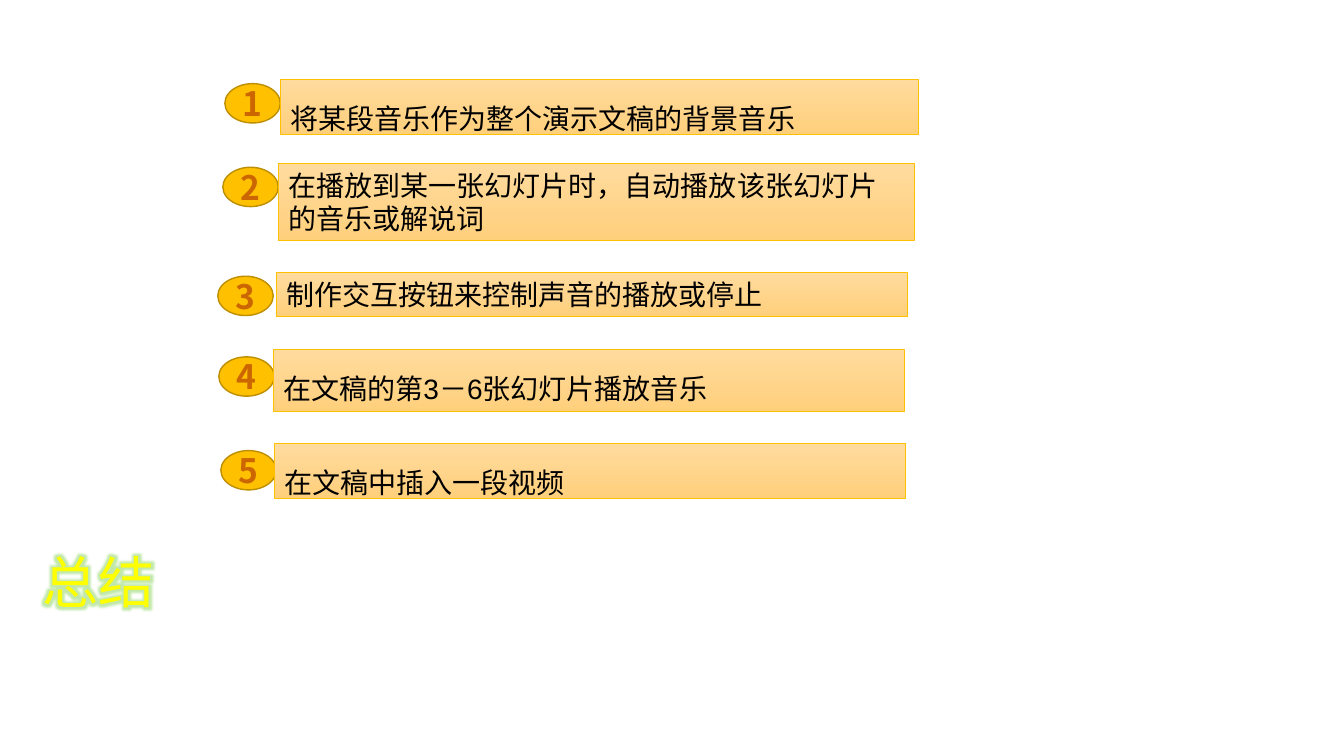
"""Build the summary slide: five numbered points on music and video in slides."""
from dataclasses import dataclass

from lxml.etree import SubElement
from pptx import Presentation
from pptx.dml.color import RGBColor as RGB
from pptx.enum.shapes import MSO_SHAPE as Shape
from pptx.enum.text import MSO_ANCHOR as Anchor, MSO_AUTO_SIZE as AutoSize, PP_ALIGN as Align
from pptx.oxml.ns import qn
from pptx.util import Inches, Pt


@dataclass(frozen=True)
class Theme:
    badge: str = "FFC000"
    badge_edge: str = "BD8E00"
    number: str = "CC6600"
    panel_top: str = "FFDB9E"
    panel_bottom: str = "FFD07C"
    text: str = "000000"
    title: str = "FFFF00"
    glow: str = "64C828"
    text_font: str = "Arial"
    number_font: str = "Noto Sans CJK SC"
    text_size: int = 20
    number_size: int = 24
    title_size: int = 40


theme = Theme()


def add_outlined(kind, left, top, width, height, edge, weight):
    shape = slide.shapes.add_shape(kind, Inches(left), Inches(top), Inches(width), Inches(height))
    shape.shadow.inherit = False
    shape.line.color.rgb = RGB.from_string(edge)
    shape.line.width = Pt(weight)
    return shape


def set_text(shape, words, size, font, color, align=Align.LEFT, anchor=Anchor.TOP, wrap=True):
    frame = shape.text_frame
    frame.text = words
    frame.word_wrap = wrap
    frame.auto_size = AutoSize.NONE
    frame.vertical_anchor = anchor
    paragraph = frame.paragraphs[0]
    paragraph.alignment = align
    paragraph.font.size = Pt(size)
    paragraph.font.name = font
    paragraph.font.color.rgb = RGB.from_string(color)
    return paragraph


deck = Presentation()
deck.slide_width, deck.slide_height = Inches(13.33), Inches(7.5)
slide = deck.slides.add_slide(deck.slide_layouts[5])

summary = slide.shapes.title
summary.left, summary.top = Inches(0.32), Inches(5.38)
summary.width, summary.height = Inches(1.32), Inches(0.77)
heading = set_text(summary, "总结", theme.title_size, theme.text_font, theme.title, wrap=False)
effects = SubElement(heading.runs[0]._r.get_or_add_rPr(), qn("a:effectLst"))
glow = SubElement(effects, qn("a:glow"), rad=str(Pt(8)))
glow_color = SubElement(glow, qn("a:srgbClr"), val=theme.glow)
SubElement(glow_color, qn("a:alpha"), val="40000")

points = [
    ("将某段音乐作为整个演示文稿的背景音乐", 2.23, 0.83, 2.78, 0.79, 6.33, 0.54, True),
    ("在播放到某一张幻灯片时，自动播放该张幻灯片的音乐或解说词", 2.21, 1.66, 2.76, 1.62, 6.31, 0.77, False),
    ("制作交互按钮来控制声音的播放或停止", 2.16, 2.74, 2.74, 2.7, 6.26, 0.44, False),
    ("在文稿的第3－6张幻灯片播放音乐", 2.17, 3.54, 2.71, 3.47, 6.26, 0.61, True),
    ("在文稿中插入一段视频", 2.19, 4.47, 2.72, 4.4, 6.26, 0.54, True),
]

for number, (words, badge_left, badge_top, left, top, width, height, spaced) in enumerate(points, 1):
    badge = add_outlined(Shape.OVAL, badge_left, badge_top, 0.55, 0.39, theme.badge_edge, 1)
    badge.fill.solid()
    badge.fill.fore_color.rgb = RGB.from_string(theme.badge)
    digit = set_text(badge, str(number), theme.number_size, theme.number_font, theme.number,
                     Align.CENTER, Anchor.MIDDLE, wrap=False)
    digit.font.bold = True

    panel = add_outlined(Shape.RECTANGLE, left, top, width, height, theme.badge, 0.5)
    panel.fill.gradient()
    panel.fill.gradient_angle = 270
    for stop, color in zip(panel.fill.gradient_stops, (theme.panel_top, theme.panel_bottom)):
        stop.color.rgb = RGB.from_string(color)
    point = set_text(panel, words, theme.text_size, theme.text_font, theme.text,
                     Align.JUSTIFY if spaced else Align.LEFT)
    if spaced:
        point.line_spacing = 1.5
        point.space_after = Pt(6)

deck.save("out.pptx")
